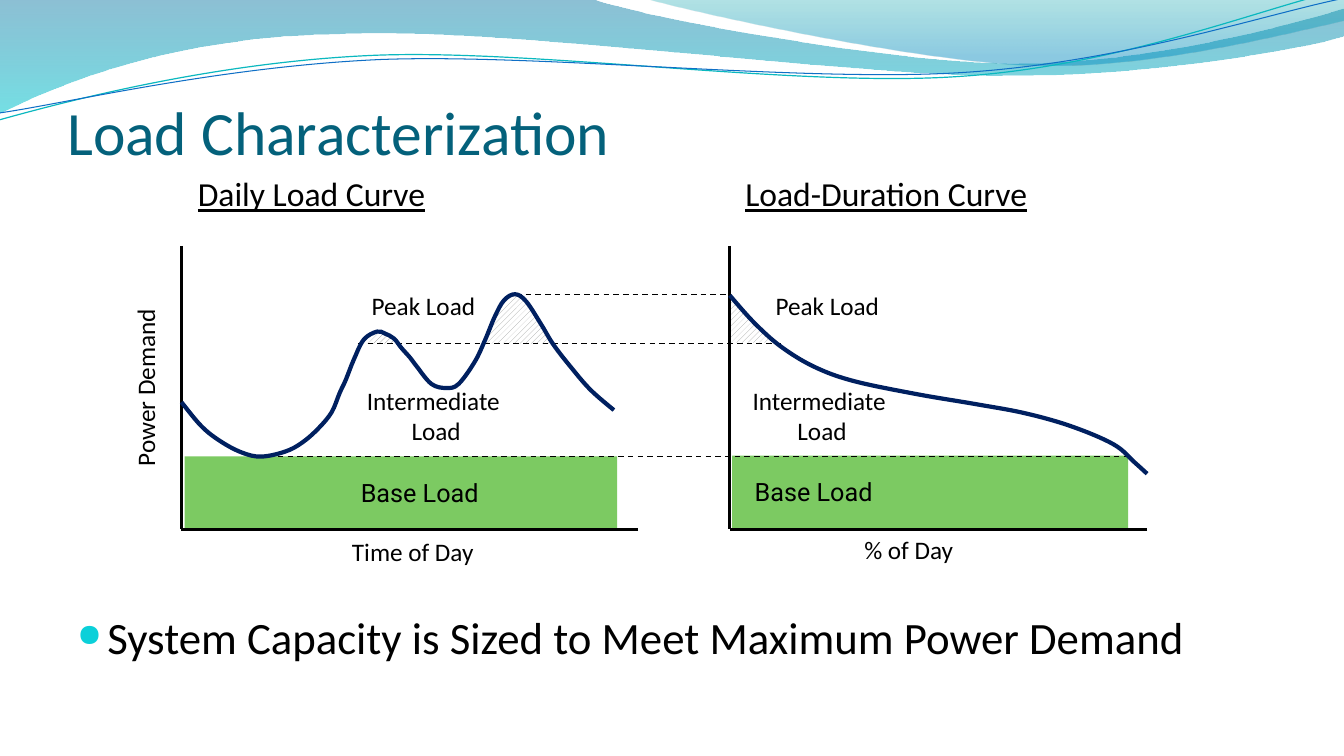
from lxml import etree
from pptx import Presentation, util as u
from pptx.dml.color import RGBColor
from pptx.enum import dml, shapes, text
from pptx.oxml.ns import qn


def color(hex_string):
    return RGBColor.from_string(hex_string)


def add_outline(start, segments, close=False):
    """Draw a path whose segments are (x, y) lines or six-number cubic curves."""
    points = [(u.Pt(segment[i]), u.Pt(segment[i + 1]))
              for segment in segments for i in range(0, len(segment), 2)]
    builder = page.shapes.build_freeform(u.Pt(start[0]), u.Pt(start[1]), scale=1.0)
    builder.add_line_segments(points, close=close)
    outline = builder.convert_to_shape()
    steps = iter(list(outline.element.iter(qn("a:lnTo"))))
    for segment in segments:
        step = next(steps)
        if len(segment) == 6:
            step.tag = qn("a:cubicBezTo")
            for control in (next(steps), next(steps)):
                step.append(control[0])
                control.getparent().remove(control)
    outline.shadow.inherit = False
    outline.fill.background()
    outline.line.fill.background()
    return outline


deck = Presentation()
deck.slide_width, deck.slide_height = u.Pt(960), u.Pt(540)
page = deck.slides.add_slide(deck.slide_layouts[6])

# Wave header: start, segments, gradient stops as (position, colour, opacity %)
wave_fills = [
    ((-0.4, 0),
     [(422.6, -0.7), (456.5, 12.2, 637.2, 45.4, 727.9, 45.4),
      (819.4, 45.4, 920.2, 18.7, 959.8, 6.5), (961.2, 25.9),
      (943.9, 31.7, 835.2, 54.7, 715.7, 54.2), (596.9, 54.2, 366.5, 20.2, 247, 24.5),
      (123.1, 25.9, 43.9, 59.8, -0.7, 81.4)],
     [(0, "0074A1", 45), (1, "00C6CF", 55)]),
    ((460, -0.7),
     [(488.9, 7.9, 654.5, 44.6, 738, 46.8), (821.5, 49.7, 923, 23, 960, 15.1), (960, 0)],
     [(0, "00A1A9", 30), (0.8, "008BBF", 45)]),
]
for start, segments, stops in wave_fills:
    wave = add_outline(start, segments, close=True)
    wave.fill.gradient()
    wave.fill.gradient_angle = 270
    for stop, (position, shade, _) in zip(wave.fill.gradient_stops, stops):
        stop.position = position
        stop.color.rgb = color(shade)
    for node, (_, _, opacity) in zip(wave.element.iter(qn("a:srgbClr")), stops):
        etree.SubElement(node, qn("a:alpha"), val=str(opacity * 1000))

wave_lines = [
    ((-0.7, 85.7),
     [(46.1, 72.7, 151.9, 44.6, 265.7, 39.6), (379.4, 34.6, 568.8, 62.6, 684, 54.7),
      (799.2, 47.5, 901.4, 5.8, 958.3, -7.2)], "0AB8BF", 0.85),
    ((0, 80.6),
     [(45.4, 74.2, 157, 47.5, 272.2, 42.5), (386.6, 38.2, 573.1, 59, 687.6, 51.8),
      (802.8, 44.6, 903.6, 10.1, 960.5, -1.4)], "0F6FC6", 0.75),
]
for start, segments, shade, width in wave_lines:
    wave = add_outline(start, segments)
    wave.line.color.rgb = color(shade)
    wave.line.width = u.Pt(width)

# Hatched peak areas
peak_areas = [
    ("A1A3A2", [(520.6, 210.2), (530.6, 222.5), (539.3, 231.1), (550.8, 241.9),
                (555.1, 244.8), (521.3, 244.8)]),
    ("808080", [(259.2, 245.5), (262.1, 240.5), (268.6, 236.9), (275, 236.9),
                (281.5, 241.2), (284.4, 245.5)]),
    ("A1A3A2", [(345.6, 245.5), (354.2, 224.6), (357.8, 216), (365, 211), (369.4, 211),
                (375.1, 212.4), (384.5, 228.2), (391.7, 240.5), (396, 245.5)]),
]
for shade, corners in peak_areas:
    peak = add_outline(corners[0], corners[1:], close=True)
    peak.fill.patterned()
    peak.fill.pattern = dml.MSO_PATTERN.WIDE_UPWARD_DIAGONAL
    peak.fill.fore_color.rgb = color(shade)
    peak.fill.back_color.rgb = color("FFFFFF")

# Base load blocks: left, top, width, left margin, alignment
base_loads = [
    (131.9, 325.9, 308.9, 34, text.PP_ALIGN.CENTER),
    (522.9, 325.4, 283, 16.2, text.PP_ALIGN.LEFT),
]
for left, top, width, margin, alignment in base_loads:
    box = page.shapes.add_shape(shapes.MSO_SHAPE.RECTANGLE, u.Pt(left), u.Pt(top),
                                u.Pt(width), u.Pt(51.8))
    box.shadow.inherit = False
    box.fill.solid()
    box.fill.fore_color.rgb = color("7CCA62")
    box.line.fill.background()
    frame = box.text_frame
    frame.text = "Base Load"
    frame.margin_left = u.Pt(margin)
    frame.vertical_anchor = text.MSO_ANCHOR.MIDDLE
    para = frame.paragraphs[0]
    para.alignment = alignment
    font = para.runs[0].font
    font.name, font.size = "Roboto", u.Pt(18)
    font.color.rgb = color("000000")

# Axes and dashed load levels: x1, y1, x2, y2, dashed
rules = [
    (368.6, 210.2, 520.6, 210.2, True),
    (255.6, 245.5, 559.4, 245.5, True),
    (191.5, 326.2, 807.8, 326.2, True),
    (455.8, 378, 129.6, 378, False),
    (129.6, 175.7, 129.6, 378, False),
    (819.4, 378, 521.3, 378, False),
    (521.3, 175.7, 521.3, 378, False),
]
for x1, y1, x2, y2, dashed in rules:
    rule = page.shapes.add_connector(shapes.MSO_CONNECTOR.STRAIGHT,
                                     u.Pt(x1), u.Pt(y1), u.Pt(x2), u.Pt(y2))
    rule.line.color.rgb = color("000000")
    rule.line.width = u.Pt(1 if dashed else 2)
    if dashed:
        rule.line.dash_style = dml.MSO_LINE.DASH
    etree.SubElement(rule.element.spPr, qn("a:effectLst"))

# Load curves: smooth splines through these points
duration_curve = [
    (521.3, 211), (538.6, 230.4), (558, 247.7), (581.8, 262.1), (609.8, 272.2),
    (654.5, 281.5), (697, 288.7), (732.2, 295.2), (765.4, 304.6), (795.6, 317.5),
    (810.7, 330.5), (819.4, 338.4),
]
daily_curve = [
    (129.6, 287.3), (144, 304.6), (157.7, 315.4), (172.8, 323.3), (186.5, 326.2),
    (203.8, 322.6), (216, 316.1), (227.5, 306), (236.9, 294.5), (242.6, 280.8),
    (247, 271.4), (252.7, 257), (259.9, 242.6), (269.3, 236.9), (275, 238.3),
    (281.5, 241.9), (286.6, 248.4), (293, 255.6), (297.4, 261.4), (308.2, 274.3),
    (319, 277.2), (327.6, 274.3), (339.1, 258.5), (346.3, 243.4), (353.5, 226.1),
    (360, 214.6), (367.9, 210.2), (375.8, 215.3), (386.6, 231.8), (395.3, 246.2),
    (408.2, 262.8), (421.9, 278.6), (438.5, 293),
]
for knots in (duration_curve, daily_curve):
    padded = [knots[0], *knots, knots[-1]]
    segments = []
    for before, here, there, after in zip(padded, padded[1:], padded[2:], padded[3:]):
        segments.append((here[0] + (there[0] - before[0]) / 6,
                         here[1] + (there[1] - before[1]) / 6,
                         there[0] - (after[0] - here[0]) / 6,
                         there[1] - (after[1] - here[1]) / 6, *there))
    curve = add_outline(knots[0], segments)
    curve.line.color.rgb = color("002060")
    curve.line.width = u.Pt(3)

# Text: wording, left, top, width, height, size, colour, alignment
LEFT, CENTER = text.PP_ALIGN.LEFT, text.PP_ALIGN.CENTER
TITLE = "Load Characterization"
MESSAGE = "System Capacity is Sized to Meet Maximum Power Demand"
labels = [
    (TITLE, 48, 30.2, 864, 90, 44, "04617B", LEFT),
    (MESSAGE, 48, 432, 864, 66.2, 32, "000000", LEFT),
    ("Intermediate \vLoad", 188.8, 271.4, 245.5, 51, 18, "000000", CENTER),
    ("Intermediate \vLoad", 464.4, 271.4, 245.5, 51, 18, "000000", CENTER),
    ("Peak Load", 203.8, 203.8, 197.3, 28.8, 18, "000000", CENTER),
    ("Peak Load", 501.3, 203.8, 179.3, 28.8, 18, "000000", CENTER),
    ("Power Demand", 89.3, 173.5, 36, 206.6, 18, "000000", CENTER),
    ("Time of Day", 172.1, 379.8, 245.5, 28.8, 18, "000000", CENTER),
    ("% of Day", 526.3, 378, 245.5, 28.8, 18, "000000", CENTER),
    ("Daily Load Curve", 134.2, 120.2, 329.8, 36.7, 24, "000000", LEFT),
    ("Load-Duration Curve", 525.3, 120.2, 329.8, 36.7, 24, "000000", LEFT),
]
for wording, left, top, width, height, size, shade, alignment in labels:
    box = page.shapes.add_textbox(u.Pt(left), u.Pt(top), u.Pt(width), u.Pt(height))
    frame = box.text_frame
    frame.word_wrap = True
    frame.text = wording
    para = frame.paragraphs[0]
    para.alignment = alignment
    if wording == TITLE:
        frame.vertical_anchor = text.MSO_ANCHOR.BOTTOM
        frame.margin_left = frame.margin_right = frame.margin_bottom = 0
    elif wording == MESSAGE:
        properties = para._p.get_or_add_pPr()
        properties.set("marL", str(u.Pt(21.6)))
        properties.set("indent", str(u.Pt(-21.6)))
        bullet_color = etree.SubElement(properties, qn("a:buClr"))
        etree.SubElement(bullet_color, qn("a:srgbClr"), val="0BD0D9")
        etree.SubElement(properties, qn("a:buSzPct"), val="70000")
        etree.SubElement(properties, qn("a:buChar"), char="●")
    elif wording == "Power Demand":
        frame._txBody.bodyPr.set("vert", "vert270")
    for span in para.runs:
        span.font.name, span.font.size = "Calibri", u.Pt(size)
        span.font.color.rgb = color(shade)
        if size == 24:
            span.font.underline = True

deck.save("out.pptx")
